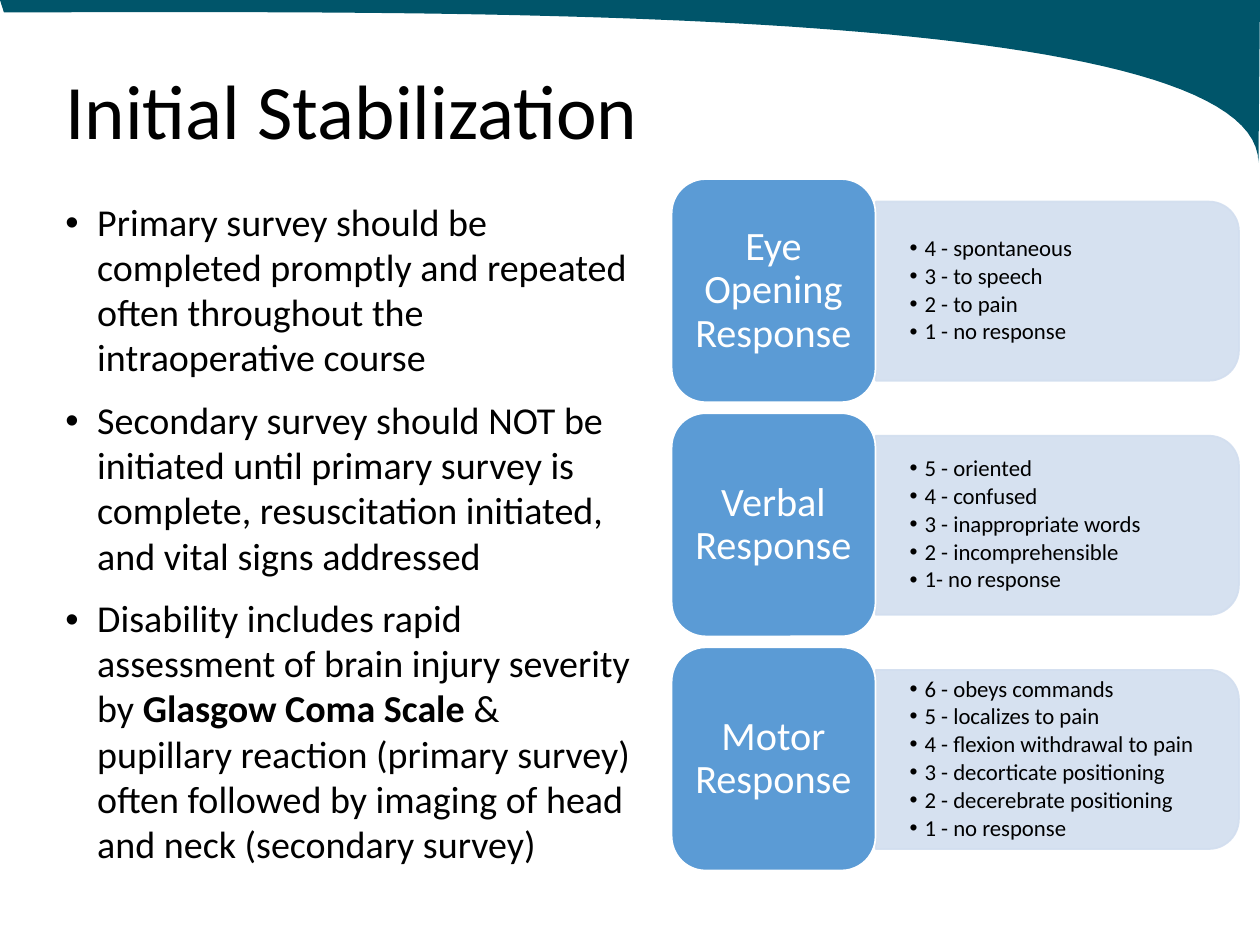
"""Build the Initial Stabilization slide with the three coma scale cards."""
from lxml import etree
from pptx import Presentation
from pptx import util as u
from pptx.dml.color import RGBColor
from pptx.enum import shapes, text
from pptx.oxml.ns import qn

TEAL = RGBColor(0x00, 0x55, 0x6A)
BLUE = RGBColor(0x5B, 0x9B, 0xD5)
PALE = RGBColor(0xD2, 0xDE, 0xEF)
WHITE = RGBColor(0xFF, 0xFF, 0xFF)
BLACK = RGBColor(0x00, 0x00, 0x00)

BODY = [
    [("Primary survey should be completed promptly and repeated often "
      "throughout the intraoperative course", False)],
    [("Secondary survey should NOT be initiated until primary survey is "
      "complete, resuscitation initiated, and vital signs addressed", False)],
    [("Disability includes rapid assessment of brain injury severity by ", False),
     ("Glasgow Coma Scale ", True),
     ("& pupillary reaction (primary survey) often followed by imaging of "
      "head and neck (secondary survey)", False)],
]
CARDS = [
    ("Eye Opening Response",
     ["4 - spontaneous", "3 - to speech", "2 - to pain", "1 - no response"]),
    ("Verbal Response",
     ["5 - oriented", "4 - confused", "3 - inappropriate words",
      "2 - incomprehensible", "1- no response"]),
    ("Motor Response",
     ["6 - obeys commands", "5 - localizes to pain",
      "4 - flexion withdrawal to pain", "3 - decorticate positioning",
      "2 - decerebrate positioning", "1 - no response"]),
]
PITCH = 4.72


def set_frame(tf, anchor, dx, dy):
    frame = {"word_wrap": True, "auto_size": text.MSO_AUTO_SIZE.NONE,
             "vertical_anchor": anchor,
             "margin_left": u.Cm(dx), "margin_right": u.Cm(dx),
             "margin_top": u.Cm(dy), "margin_bottom": u.Cm(dy)}
    for key, value in frame.items():
        setattr(tf, key, value)


def add_text(p, runs, size, color, bullet=0, **spacing):
    if bullet:
        pPr = p._p.get_or_add_pPr()
        pPr.set("marL", str(u.Cm(bullet)))
        pPr.set("indent", str(-u.Cm(bullet)))
        etree.SubElement(pPr, qn("a:buFont")).set("typeface", "Arial")
        etree.SubElement(pPr, qn("a:buChar")).set("char", "•")
    for key, value in spacing.items():
        setattr(p, key, value)
    for words, bold in runs:
        r = p.add_run()
        r.text = words
        r.font.color.rgb = color
        for key, value in {"name": "Calibri", "size": u.Pt(size), "bold": bold}.items():
            setattr(r.font, key, value)


prs = Presentation()
prs.slide_width, prs.slide_height = u.Cm(25.4), u.Cm(19.05)
s = prs.slides.add_slide(prs.slide_layouts[1])

curve = [(25.37, 3.28), (25.35, 0), (8.53, 0.25), (0.08, 0.25)]
points = []
for i in range(61):
    t = i / 60
    weights = [(1 - t) ** 3, 3 * t * (1 - t) ** 2, 3 * t ** 2 * (1 - t), t ** 3]
    points.append(tuple(u.Cm(sum(w * c[axis] for w, c in zip(weights, curve)))
                        for axis in (0, 1)))
fb = s.shapes.build_freeform(0, 0)
fb.add_line_segments([(u.Cm(25.4), 0)] + points, close=True)
sp = fb.convert_to_shape()
sp.shadow.inherit = False
sp.fill.solid()
sp.fill.fore_color.rgb = TEAL
sp.line.fill.background()
s.shapes._spTree.insert(2, sp._element)

title, body = s.shapes.title, s.placeholders[1]
for sp, box in ((title, (1.07, 1.02, 22.61, 2.59)), (body, (1.07, 3.91, 12.07, 14.4))):
    for key, value in zip(("left", "top", "width", "height"), box):
        setattr(sp, key, u.Cm(value))
set_frame(title.text_frame, text.MSO_ANCHOR.MIDDLE, 0.25, 0.13)
add_text(title.text_frame.paragraphs[0], [("Initial Stabilization", False)], 44, BLACK,
         alignment=text.PP_ALIGN.LEFT, line_spacing=0.9)
tf = body.text_frame
set_frame(tf, text.MSO_ANCHOR.TOP, 0.25, 0.13)
for i, runs in enumerate(BODY):
    p = tf.add_paragraph() if i else tf.paragraphs[0]
    add_text(p, runs, 21.7, BLACK, bullet=0.64, line_spacing=0.99,
             space_before=u.Pt(10 if i else 0))

for row, (label, scores) in enumerate(CARDS):
    dy = row * PITCH
    panel = s.shapes.add_shape(shapes.MSO_SHAPE.ROUND_2_SAME_RECTANGLE, u.Cm(19.51),
                               u.Cm(2.21 + dy), u.Cm(3.61), u.Cm(7.32))
    panel.rotation = 90
    card = s.shapes.add_shape(shapes.MSO_SHAPE.ROUNDED_RECTANGLE, u.Cm(13.54),
                              u.Cm(3.61 + dy), u.Cm(4.11), u.Cm(4.5))
    for sp, fill, line in ((panel, PALE, PALE), (card, BLUE, WHITE)):
        sp.shadow.inherit = False
        sp.fill.solid()
        sp.fill.fore_color.rgb = fill
        sp.line.color.rgb = line
        sp.line.width = u.Pt(1)
    for clr in panel._element.spPr.iter(qn("a:srgbClr")):
        etree.SubElement(clr, qn("a:alpha")).set("val", "90000")

    set_frame(card.text_frame, text.MSO_ANCHOR.MIDDLE, 0.25, 0.13)
    add_text(card.text_frame.paragraphs[0], [(label, False)], 23, WHITE,
             alignment=text.PP_ALIGN.CENTER, line_spacing=0.9)

    tf = s.shapes.add_textbox(u.Cm(17.65), u.Cm(4.24 + dy), u.Cm(7.14),
                              u.Cm(3.25)).text_frame
    set_frame(tf, text.MSO_ANCHOR.MIDDLE, 0.69, 0.36)
    for i, score in enumerate(scores):
        p = tf.add_paragraph() if i else tf.paragraphs[0]
        add_text(p, [(score, False)], 13, BLACK, bullet=0.3, line_spacing=0.9,
                 space_after=u.Pt(1.8))

prs.save("out.pptx")
